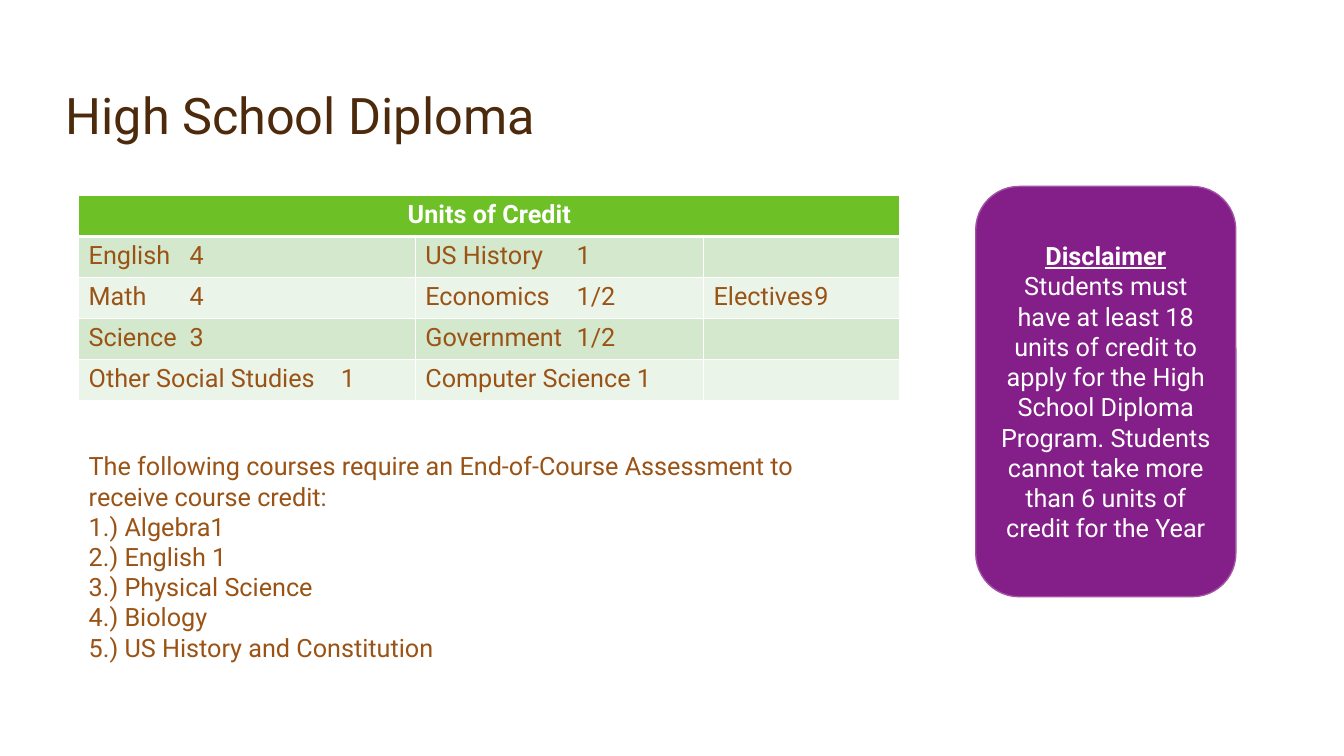
from dataclasses import dataclass

from lxml.etree import SubElement
from pptx import Presentation
from pptx.dml.color import RGBColor
from pptx.enum.shapes import MSO_SHAPE
from pptx.enum.text import MSO_ANCHOR, MSO_AUTO_SIZE, PP_ALIGN
from pptx.oxml.ns import qn
from pptx.util import Inches, Pt


@dataclass(frozen=True)
class Theme:
    font: str = "Roboto"
    title_size: int = 36
    body_size: int = 18
    title: str = "4D2A0B"
    body: str = "9A5315"
    white: str = "FFFFFF"
    header: str = "6DC025"
    bands: tuple = ("D4E8CD", "EBF4E8")
    panel: str = "841E89"
    panel_line: str = "A152A5"


THEME = Theme()
COLS, ROWS = 133.33, 75  # grid that covers the slide

# Each cell: label, credit, tab position of the credit in grid columns
CREDITS = [
    [("English", "4", 11.9), ("US History", "1", 17.9), None],
    [("Math", "4", 10.7), ("Economics", "1/2", 17.4), ("Electives", "9", 12.4)],
    [("Science", "3", 12.5), ("Government", "1/2", 16.8), None],
    [("Other Social Studies", "1", 24.3), ("Computer Science 1", None, None), None],
]
ASSESSED = ["Algebra1", "English 1", "Physical Science", "Biology",
            "US History and Constitution"]


def write(p, text, size=THEME.body_size, color=THEME.body, bold=False,
          underline=False, align=PP_ALIGN.LEFT, spacing=1.0, tab=None):
    """Put one formatted run in a paragraph, with an optional tab stop (EMU)."""
    p.alignment = align
    p.line_spacing = spacing
    p.space_before = p.space_after = Pt(0)
    pPr = p._p.get_or_add_pPr()
    pPr.set("marL", "0")
    pPr.set("indent", "0")
    SubElement(pPr, qn("a:buNone"))
    if tab:
        SubElement(SubElement(pPr, qn("a:tabLst")), qn("a:tab"),
                   pos=str(tab), algn="l")
    r = p.add_run()
    r.text = text
    f = r.font
    f.name, f.size, f.bold, f.underline = THEME.font, Pt(size), bold, underline
    f.color.rgb = RGBColor.from_string(color)


def paint(fill, color):
    fill.solid()
    fill.fore_color.rgb = RGBColor.from_string(color)


def set_borders(cell, top=1, bottom=1):
    tcPr = cell._tc.get_or_add_tcPr()
    for side, width in (("L", 1), ("R", 1), ("T", top), ("B", bottom)):
        ln = SubElement(tcPr, qn(f"a:ln{side}"), w=str(Pt(width)))
        SubElement(SubElement(ln, qn("a:solidFill")), qn("a:srgbClr"),
                   val=THEME.white)


class SlideBuilder:
    def __init__(self, prs, layout):
        self.prs = prs
        self.slide = prs.slides.add_slide(layout)

    def x(self, cols):
        return round(self.prs.slide_width * cols / COLS)

    def y(self, rows):
        return round(self.prs.slide_height * rows / ROWS)

    def box(self, left, top, width, height):
        return self.x(left), self.y(top), self.x(width), self.y(height)

    def place(self, sp, *area):
        sp.left, sp.top, sp.width, sp.height = self.box(*area)
        tf = sp.text_frame
        tf.word_wrap = True
        tf.auto_size = MSO_AUTO_SIZE.NONE
        return tf

    def title(self, text, *area):
        tf = self.place(self.slide.shapes.title, *area)
        tf.vertical_anchor = MSO_ANCHOR.BOTTOM
        write(tf.paragraphs[0], text, size=THEME.title_size,
              color=THEME.title, spacing=0.9)

    def body(self, lines, *area):
        tf = self.place(self.slide.placeholders[1], *area)
        tf.vertical_anchor = MSO_ANCHOR.TOP
        for i, line in enumerate(lines):
            write(tf.add_paragraph() if i else tf.paragraphs[0], line)

    def credit_table(self, heading, rows, widths, left, top, row_height):
        n = len(rows) + 1
        table = self.slide.shapes.add_table(
            n, len(widths),
            *self.box(left, top, sum(widths), n * row_height)).table
        for column, width in zip(table.columns, widths):
            column.width = self.x(width)
        for row in table.rows:
            row.height = self.y(row_height)

        for j in range(len(widths)):
            set_borders(table.cell(0, j), bottom=3)
            paint(table.cell(0, j).fill, THEME.header)
        head = table.cell(0, 0)
        head.merge(table.cell(0, len(widths) - 1))
        write(head.text_frame.paragraphs[0], heading, color=THEME.white,
              bold=True, align=PP_ALIGN.CENTER)

        for i, row in enumerate(rows):
            for j, entry in enumerate(row):
                cell = table.cell(i + 1, j)
                set_borders(cell, top=1 if i else 3)
                paint(cell.fill, THEME.bands[i % 2])
                if entry:
                    label, credit, stop = entry
                    write(cell.text_frame.paragraphs[0],
                          f"{label}\t{credit}" if credit else label,
                          tab=self.x(stop) if credit else None)

    def panel(self, heading, text, *area):
        sp = self.slide.shapes.add_shape(MSO_SHAPE.ROUNDED_RECTANGLE,
                                         *self.box(*area))
        sp.shadow.inherit = False
        paint(sp.fill, THEME.panel)
        paint(sp.line.fill, THEME.panel_line)
        sp.line.width = Pt(1)
        tf = sp.text_frame
        tf.word_wrap = True
        tf.vertical_anchor = MSO_ANCHOR.MIDDLE
        style = dict(color=THEME.white, align=PP_ALIGN.CENTER)
        write(tf.paragraphs[0], heading, bold=True, underline=True, **style)
        write(tf.add_paragraph(), text, **style)


def main():
    prs = Presentation()
    prs.slide_width, prs.slide_height = Inches(13.33), Inches(7.5)
    s = SlideBuilder(prs, prs.slide_layouts[1])
    s.title("High School Diploma", 5.5, 1.6, 110, 13.3)
    s.credit_table("Units of Credit", CREDITS, (33.4, 28.6, 19.5),
                   left=7.8, top=19.4, row_height=4.06)
    s.body(["The following courses require an End-of-Course Assessment "
            "to receive course credit:"]
           + [f"{i}.) {course}" for i, course in enumerate(ASSESSED, 1)],
           7.8, 44.2, 72, 22.2)
    s.panel("Disclaimer",
            "Students must have at least 18 units of credit to apply for the "
            "High School Diploma Program. Students cannot take more than "
            "6 units of credit for the Year",
            96.8, 18.5, 25.8, 40.7)
    prs.save("out.pptx")


if __name__ == "__main__":
    main()
